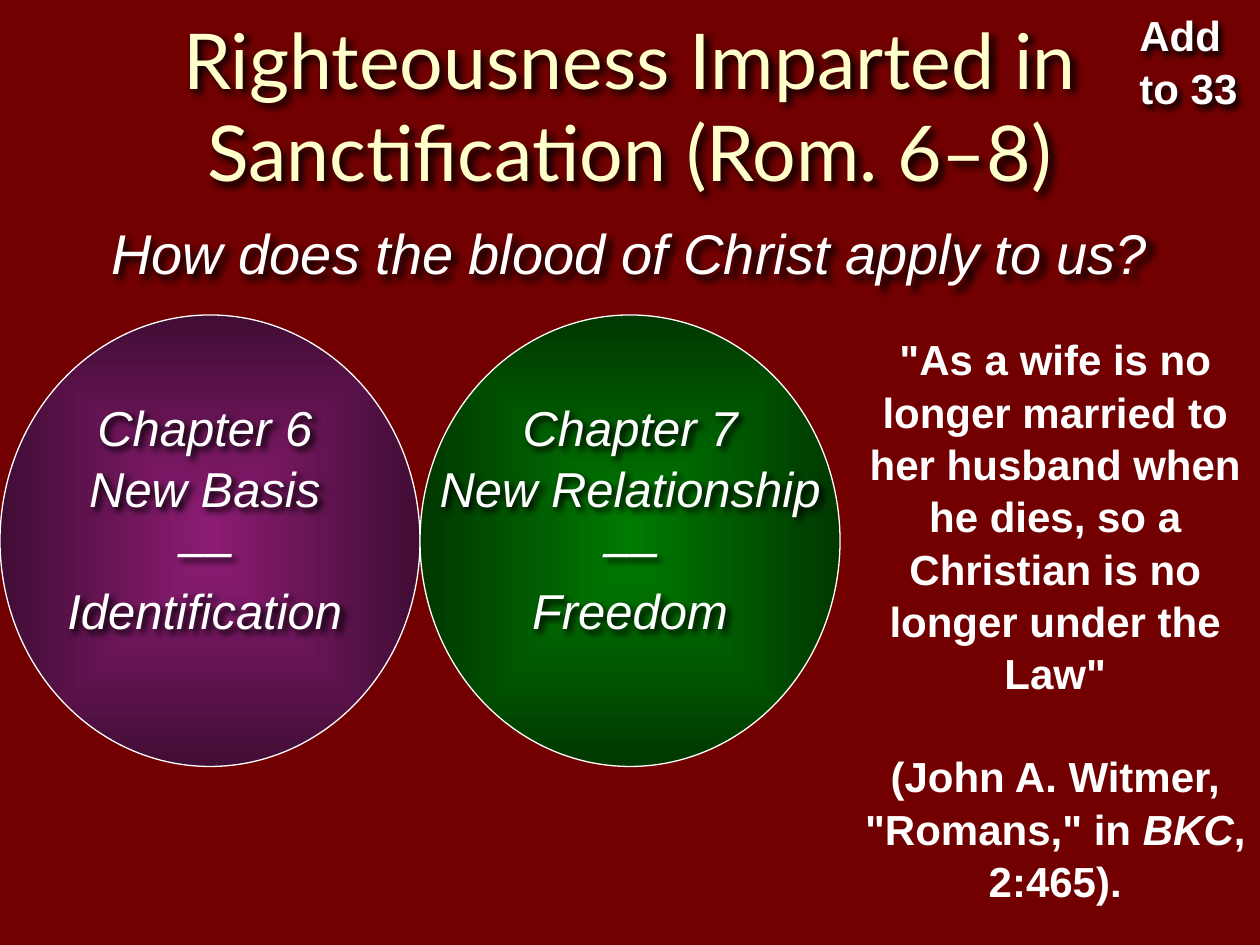
from lxml import etree
from pptx import Presentation
from pptx.dml.color import RGBColor
from pptx.enum.shapes import MSO_SHAPE
from pptx.enum.text import MSO_ANCHOR, PP_ALIGN
from pptx.oxml import parse_xml
from pptx.oxml.ns import nsdecls, qn
from pptx.util import Pt

OVAL = MSO_SHAPE.OVAL
MIDDLE = MSO_ANCHOR.MIDDLE
LEFT, CENTER = PP_ALIGN.LEFT, PP_ALIGN.CENTER
COLORS = {
    "background": "720000", "title": "FFFFCC", "text": "FFFFFF", "shadow": "000000",
    "purple": "8C1C73", "dark purple": "410D35",
    "green": "007A01", "dark green": "003800",
}


def color(name):
    return RGBColor.from_string(COLORS[name])


def add_shadow(shape):
    """Give the text of an unfilled shape a soft shadow to the lower right."""
    shape._element.spPr.append(parse_xml(
        f'<a:effectLst {nsdecls("a")}><a:outerShdw blurRad="50800" dist="38100" '
        f'dir="2700000" algn="tl" rotWithShape="0"><a:srgbClr val="{COLORS["shadow"]}"/>'
        '</a:outerShdw></a:effectLst>'))


prs = Presentation()
prs.slide_width, prs.slide_height = Pt(720), Pt(540)
slide = prs.slides.add_slide(prs.slide_layouts[5])
slide.background.fill.solid()
slide.background.fill.fore_color.rgb = color("background")

title = slide.shapes.title
title.left, title.top, title.width, title.height = Pt(0), Pt(0), Pt(720), Pt(120)
title.text_frame.text = "Righteousness Imparted in Sanctification (Rom. 6–8)"
title.text_frame.vertical_anchor = MIDDLE
heading = title.text_frame.paragraphs[0]
heading.alignment = CENTER
heading.font.name, heading.font.size = "Lato", Pt(44)
heading.font.color.rgb = color("title")
add_shadow(title)

# Circles: left edge, centre colour, rim colour
for left, centre, rim in [(0, "purple", "dark purple"), (240, "green", "dark green")]:
    circle = slide.shapes.add_shape(OVAL, Pt(left), Pt(180), Pt(240), Pt(258))
    circle.shadow.inherit = False
    circle.line.color.rgb = color("text")
    circle.line.width = Pt(0.75)
    circle.fill.gradient()
    for stop, shade, position in zip(circle.fill.gradient_stops, (centre, rim), (0, 1)):
        stop.color.rgb = color(shade)
        stop.position = position
    gradient = circle._element.spPr.find(qn("a:gradFill"))
    gradient.remove(gradient.find(qn("a:lin")))
    radial = etree.SubElement(gradient, qn("a:path"), path="shape")
    etree.SubElement(radial, qn("a:fillToRect"), l="50000", t="50000", r="50000", b="50000")

# Texts: box, size, bold, italic, alignment, shadow, paragraphs of (text, italic) runs
texts = [
    ((0, 120, 720, 46), 32, False, True, CENTER, True,
     [[("How does the blood of Christ apply to us?", True)]]),
    ((0, 222, 234, 142), 28, False, True, CENTER, True,
     [[("Chapter 6\vNew Basis\v––\vIdentification", True)]]),
    ((243, 222, 234, 142), 28, False, True, CENTER, True,
     [[("Chapter 7\vNew Relationship\v––\vFreedom", True)]]),
    ((486, 186, 234, 327), 24, True, False, CENTER, False,
     [[('"As a wife is no longer married to her husband when he dies, '
        'so a Christian is no longer under the Law"', False)],
      [('(John A. Witmer, "Romans," in ', False), ("BKC", True), (", 2:465).", False)]]),
    ((644, 1, 76, 65), 24, True, False, LEFT, True, [[("Add to 33", False)]]),
]
for box, size, bold, italic, alignment, shadowed, paragraphs in texts:
    text_box = slide.shapes.add_textbox(*map(Pt, box))
    frame = text_box.text_frame
    frame.word_wrap = True
    for number, runs in enumerate(paragraphs):
        paragraph = frame.add_paragraph() if number else frame.paragraphs[0]
        if number:
            paragraph.space_before = Pt(28.8)
        paragraph.alignment = alignment
        paragraph.line_spacing = 1.04
        font = paragraph.font
        font.name, font.size, font.bold, font.italic = "Arial", Pt(size), bold, italic
        font.color.rgb = color("text")
        if len(runs) == 1:
            paragraph.text = runs[0][0]
            continue
        for words, slanted in runs:
            run = paragraph.add_run()
            run.text = words
            run.font.italic = slanted
    if shadowed:
        add_shadow(text_box)

prs.save("out.pptx")
